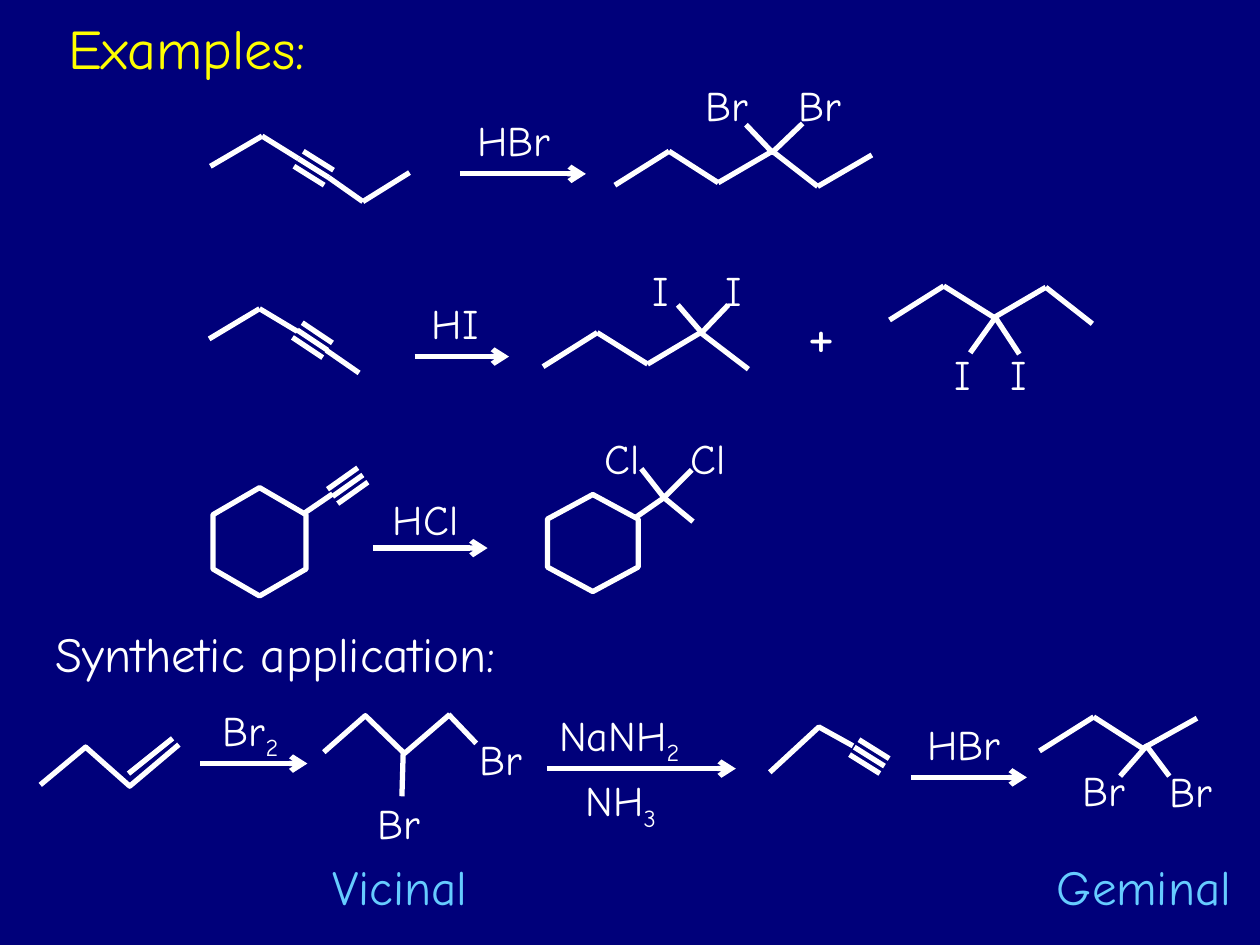
"""Build a slide of alkyne hydrohalogenation examples and a synthetic application."""
from itertools import pairwise
from math import hypot

from lxml import etree
from pptx import Presentation
from pptx.dml.color import RGBColor
from pptx.enum.shapes import MSO_CONNECTOR, MSO_SHAPE
from pptx.enum.text import MSO_ANCHOR, MSO_AUTO_SIZE, PP_ALIGN
from pptx.oxml.ns import qn
from pptx.util import Inches, Pt

STRAIGHT, HEXAGON = MSO_CONNECTOR.STRAIGHT, MSO_SHAPE.HEXAGON
TOP, LEFT, FIT_SHAPE = MSO_ANCHOR.TOP, PP_ALIGN.LEFT, MSO_AUTO_SIZE.SHAPE_TO_FIT_TEXT

THEME = {
    "font": "Comic Neue",
    "background": "00007A", "ink": "FFFFFF", "title": "FFFF00", "class": "66CCFF",
    "title_size": 32, "heading_size": 28, "formula_size": 24, "plus_size": 36,
    "bond_width": 3, "bond_gap": 0.07,
}

TITLE = ("Examples:", (0.44, 0.06, 2.61, 0.63))
HEADING = ("Synthetic application:", (0.34, 4.9, 4.25, 0.57))
PLUS = ("+", (6.31, 2.29, 0.48, 0.7))
DIHALIDE_CLASSES = [
    ("Vicinal", (2.54, 6.75, 1.75, 0.57)),
    ("Geminal", (8.29, 6.75, 1.71, 0.57)),
]
FORMULA_HEIGHT = 0.5
REAGENTS = [
    ("HBr", 3.69, 0.86, 0.94),
    ("HI", 3.33, 2.31, 0.94),
    ("HCl", 3.02, 3.87, 1.1),
    ("Br_2", 1.67, 5.54, 0.71),
    ("NaNH_2", 4.34, 5.58, 1.48),
    ("NH_3", 4.55, 6.1, 1.04),
    ("HBr", 7.26, 5.65, 0.9),
]
HALOGEN_WIDTH = 0.81
HALOGENS = [
    ("Br", 5.5, 0.58), ("Br", 6.24, 0.58),
    ("I", 5.08, 2.05), ("I", 5.66, 2.05),
    ("I", 7.48, 2.72), ("I", 7.92, 2.72),
    ("Cl", 4.7, 3.38), ("Cl", 5.38, 3.38),
    ("Br", 2.9, 6.28), ("Br", 3.71, 5.77),
    ("Br", 8.49, 6.02), ("Br", 9.18, 6.03),
]
REACTION_ARROWS = [
    (3.65, 4.65, 1.38), (3.29, 4.04, 2.83), (2.96, 3.87, 4.35),
    (1.59, 2.44, 6.06), (4.34, 5.84, 6.1), (7.23, 8.15, 6.17),
]
CHAINS = [
    [(1.67, 1.32), (2.08, 1.08), (2.37, 1.26)],
    [(2.61, 1.41), (2.88, 1.6), (3.25, 1.37)],
    [(4.88, 1.47), (5.31, 1.2), (5.7, 1.45), (6.13, 1.2), (6.49, 1.48), (6.92, 1.23)],
    [(1.66, 2.69), (2.06, 2.45), (2.36, 2.63)],
    [(2.59, 2.78), (2.85, 2.96)],
    [(4.31, 2.91), (4.74, 2.64), (5.14, 2.89), (5.56, 2.64), (5.94, 2.93)],
    [(7.06, 2.54), (7.49, 2.27), (7.89, 2.52), (8.3, 2.28), (8.67, 2.57)],
    [(2.42, 4.07), (2.64, 3.92)],
    [(5.04, 4.11), (5.27, 3.95), (5.5, 4.14)],
    [(1.02, 6.14), (1.37, 5.86)],
    [(3.2, 5.97), (3.19, 6.32)],
    [(3.56, 5.67), (3.78, 5.9)],
    [(8.25, 5.96), (8.68, 5.69), (9.07, 5.94), (9.5, 5.7)],
]
TRIPLE_BONDS = [
    ((2.37, 1.26), (2.61, 1.41)),
    ((2.36, 2.62), (2.6, 2.78)),
    ((2.64, 3.94), (2.88, 3.77)),
    ((6.78, 5.93), (7.02, 6.08)),
]
OUTLINES = [
    [(5.92, 0.99), (6.13, 1.21), (6.37, 0.98)],
    [(5.38, 2.42), (5.57, 2.64), (5.78, 2.42)],
    [(8.09, 2.81), (7.9, 2.52), (7.7, 2.8)],
    [(5.09, 3.72), (5.27, 3.95), (5.49, 3.73)],
    [(0.32, 6.23), (0.68, 5.93), (1.03, 6.24), (1.42, 5.91)],
    [(2.57, 5.97), (2.9, 5.68), (3.21, 5.98), (3.57, 5.67)],
    [(6.11, 6.13), (6.5, 5.77), (6.77, 5.92)],
    [(9.28, 6.16), (9.1, 5.92), (8.89, 6.16)],
]
RINGS = [((1.63, 3.93, 0.86, 0.74), 0.29), ((4.32, 3.95, 0.77, 0.72), 0.27)]


def colour(name):
    return RGBColor.from_string(THEME[name])


def write(slide, text, box, size="formula_size", ink="ink", holder=None):
    holder = holder or slide.shapes.add_textbox(0, 0, 0, 0)
    holder.left, holder.top, holder.width, holder.height = map(Inches, box)
    frame = holder.text_frame
    frame.word_wrap, frame.auto_size, frame.vertical_anchor = True, FIT_SHAPE, TOP
    paragraph = frame.paragraphs[0]
    paragraph.alignment = LEFT
    for position, part in enumerate(text.split("_")):
        run = paragraph.add_run()
        run.text = part
        run.font.name, run.font.size = THEME["font"], Pt(THEME[size])
        run.font.color.rgb = colour(ink)
        if position:
            run.font._element.set("baseline", "-25000")


def ink_line(line):
    line.color.rgb, line.width = colour("ink"), Pt(THEME["bond_width"])


def draw_bond(slide, start, end, arrow=False):
    bond = slide.shapes.add_connector(STRAIGHT, *map(Inches, (*start, *end)))
    ink_line(bond.line)
    properties = bond._element.spPr
    if arrow:
        etree.SubElement(properties.find(qn("a:ln")), qn("a:tailEnd"), type="arrow")
    etree.SubElement(properties, qn("a:effectLst"))


def draw_triple_bond(slide, start, end):
    (x1, y1), (x2, y2) = start, end
    scale = THEME["bond_gap"] / hypot(x2 - x1, y2 - y1)
    across, down = (y1 - y2) * scale, (x2 - x1) * scale
    for side in (-1, 0, 1):
        dx, dy = side * across, side * down
        draw_bond(slide, (x1 + dx, y1 + dy), (x2 + dx, y2 + dy))


def style_outline(outline):
    outline.shadow.inherit = False
    outline.fill.background()
    ink_line(outline.line)


def main():
    presentation = Presentation()
    presentation.slide_width, presentation.slide_height = Inches(10), Inches(7.5)
    slide = presentation.slides.add_slide(presentation.slide_layouts[5])
    slide.background.fill.solid()
    slide.background.fill.fore_color.rgb = colour("background")

    for chain in CHAINS:
        for start, end in pairwise(chain):
            draw_bond(slide, start, end)
    for start, end in TRIPLE_BONDS:
        draw_triple_bond(slide, start, end)
    for tail_x, head_x, y in REACTION_ARROWS:
        draw_bond(slide, (tail_x, y), (head_x, y), arrow=True)
    for corners in OUTLINES:
        first, *rest = [tuple(map(Inches, corner)) for corner in corners]
        builder = slide.shapes.build_freeform(*first)
        builder.add_line_segments(rest, close=False)
        style_outline(builder.convert_to_shape())
    for box, inset in RINGS:
        ring = slide.shapes.add_shape(HEXAGON, *map(Inches, box))
        ring.rotation, ring.adjustments[0] = 270, inset
        style_outline(ring)

    write(slide, *TITLE, size="title_size", ink="title", holder=slide.shapes.title)
    write(slide, *HEADING, size="heading_size")
    write(slide, *PLUS, size="plus_size")
    for label, box in DIHALIDE_CLASSES:
        write(slide, label, box, size="heading_size", ink="class")
    for formula, left, top, width in REAGENTS:
        write(slide, formula, (left, top, width, FORMULA_HEIGHT))
    for symbol, left, top in HALOGENS:
        write(slide, symbol, (left, top, HALOGEN_WIDTH, FORMULA_HEIGHT))
    presentation.save("out.pptx")


if __name__ == "__main__":
    main()
